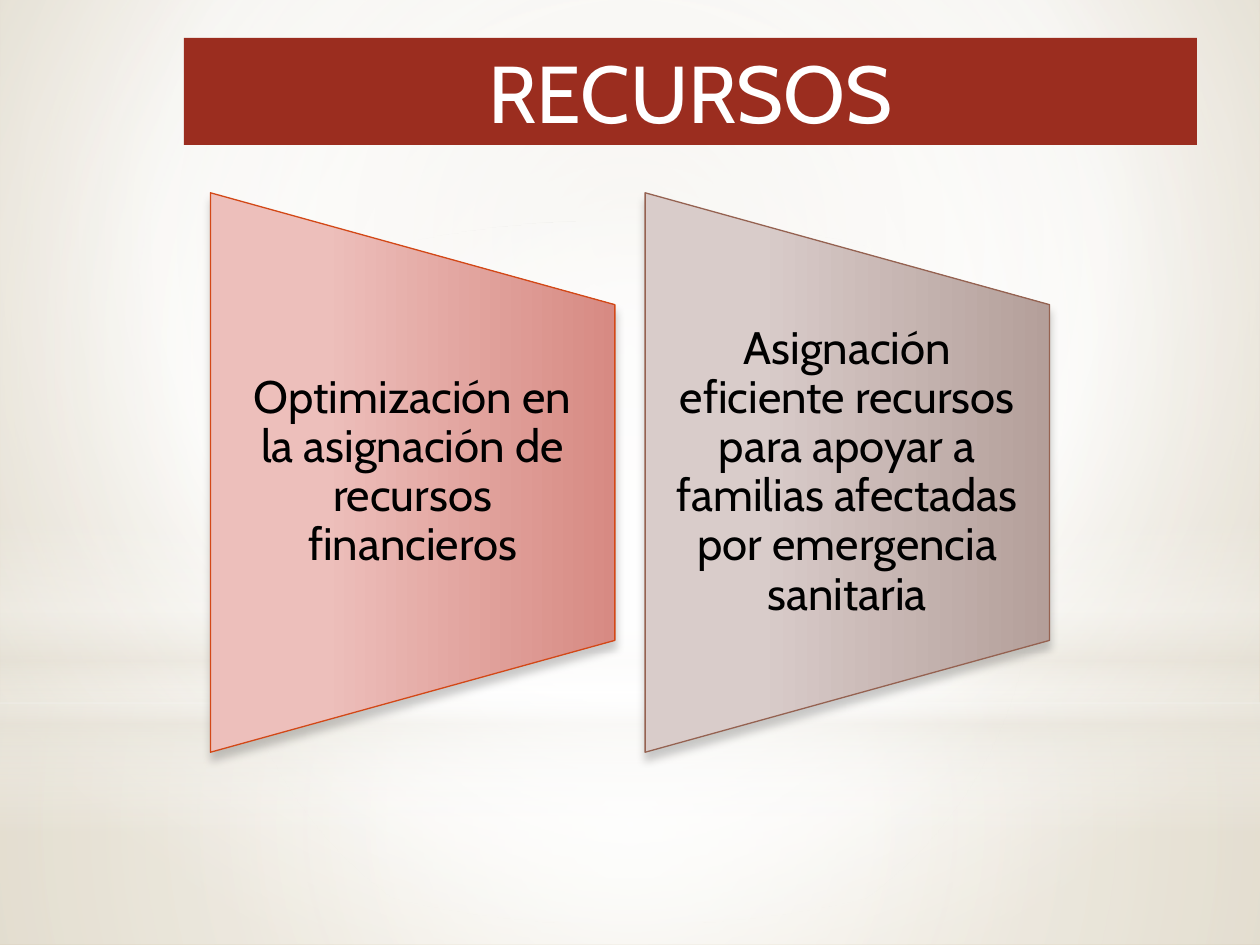
from typing import NamedTuple

from lxml.etree import SubElement as Sub
from pptx import Presentation
from pptx.dml.color import RGBColor
from pptx.enum.shapes import MSO_SHAPE as Kind
from pptx.enum.text import MSO_ANCHOR as Anchor, PP_ALIGN as Align
from pptx.oxml import parse_xml
from pptx.oxml.ns import nsdecls, qn
from pptx.util import Inches, Pt

COLS, ROWS = 100, 75
CELL = Inches(0.1)
FONT = "Cabin"
MID = (50, 50, 50, 50)


class Box(NamedTuple):
    """A place on the grid, in columns and rows."""
    col: float
    row: float
    wide: float
    high: float

    def emu(self) -> list[int]:
        return [round(n * CELL) for n in self]


class Stop(NamedTuple):
    pos: int
    hue: str
    alpha: int = 100


class Layer(NamedTuple):
    kind: Kind
    box: Box
    stops: list[Stop]
    focus: tuple | None = MID


class Panel(NamedTuple):
    text: str
    light: str
    dark: str
    edge: str


LAYERS = [
    Layer(Kind.RECTANGLE, Box(0, 55.8, COLS, 19.2),
          [Stop(0, "FFFFFF", 91), Stop(37, "FFFFFF", 76), Stop(100, "E9E5DC", 79)]),
    Layer(Kind.RECTANGLE, Box(0, 0, COLS, 55.8),
          [Stop(0, "FFFFFF", 89), Stop(48, "FFFFFF", 62), Stop(100, "E9E5DC", 79)]),
    Layer(Kind.RECTANGLE, Box(0, 41.2, COLS, 25),
          [Stop(0, "FFFFFF", 0), Stop(29, "FFFFFF", 30), Stop(45, "E9E5DC", 40),
           Stop(55, "FFFFFF", 26), Stop(65, "E9E5DC", 60), Stop(100, "FFFFFF", 0)], None),
    Layer(Kind.OVAL, Box(0, 17.5, COLS, 55.8),
          [Stop(0, "FFFFFF"), Stop(56, "FFFFFF", 0)]),
]
BACK = [Stop(0, "E3DDCF"), Stop(60, "FFFFFF"), Stop(100, "CDBF9F")]
PANELS = [
    Panel("Optimización en la asignación de recursos financieros",
          "EDBFBB", "D78A83", "D34817"),
    Panel("Asignación eficiente recursos para apoyar a familias afectadas "
          "por emergencia sanitaria", "D9CCCA", "B49F9A", "956251"),
]
FIRST = Box(16.7, 15.3, 32.1, 44.4)
PITCH = 34.5


def color(code: str) -> RGBColor:
    return RGBColor.from_string(code)


def blend(fill, parent, stops: list[Stop], focus: tuple | None = None) -> None:
    """Fill with a gradient: round about the focus, or downwards without one."""
    fill.solid()
    old = parent.find(qn("a:solidFill"))
    grad = parse_xml(f'<a:gradFill {nsdecls("a")} rotWithShape="1"/>')
    chain = Sub(grad, qn("a:gsLst"))
    for stop in stops:
        mark = Sub(chain, qn("a:gs"), pos=str(stop.pos * 1000))
        hue = Sub(mark, qn("a:srgbClr"), val=stop.hue)
        if stop.alpha < 100:
            Sub(hue, qn("a:alpha"), val=str(stop.alpha * 1000))
    if focus:
        ring = Sub(grad, qn("a:path"), {"path": "circle"})
        sides = {side: str(n * 1000) for side, n in zip("ltrb", focus)}
        Sub(ring, qn("a:fillToRect"), sides)
    else:
        Sub(grad, qn("a:lin"), ang="5400000", scaled="0")
    parent.replace(old, grad)


def shade(shape) -> None:
    """Drop a soft shadow straight down."""
    effects = shape._element.spPr.find(qn("a:effectLst"))
    drop = Sub(effects, qn("a:outerShdw"), blurRad=str(Pt(5)), dist=str(Pt(4)),
               dir="5400000", rotWithShape="0")
    hue = Sub(drop, qn("a:srgbClr"), val="000000")
    Sub(hue, qn("a:alpha"), val="20000")


def add(slide, kind: Kind, box: Box):
    shape = slide.shapes.add_shape(kind, *box.emu())
    shape.shadow.inherit = False
    shape.line.fill.background()
    return shape


def write(shape, text: str, size: int, hue: str, space: float = 1) -> None:
    frame = shape.text_frame
    frame.text = text
    frame.word_wrap = True
    frame.vertical_anchor = Anchor.MIDDLE
    para = frame.paragraphs[0]
    para.alignment = Align.CENTER
    para.line_spacing = space
    font = para.runs[0].font
    font.name, font.size = FONT, Pt(size)
    font.color.rgb = color(hue)


def draw_layer(slide, layer: Layer) -> None:
    shape = add(slide, layer.kind, layer.box)
    blend(shape.fill, shape._element.spPr, layer.stops, layer.focus)


def draw_title(slide) -> None:
    bar = add(slide, Kind.RECTANGLE, Box(14.6, 3, 80.4, 8.5))
    bar.fill.solid()
    bar.fill.fore_color.rgb = color("9B2D1F")
    write(bar, "RECURSOS", 46, "FFFFFF")


def draw_panel(slide, panel: Panel, box: Box) -> None:
    """Draw a trapezoid turned on its side, with upright text over it."""
    turn = (box.wide - box.high) / 2
    shape = add(slide, Kind.FLOWCHART_MANUAL_OPERATION,
                Box(box.col + turn, box.row - turn, box.high, box.wide))
    shape.rotation = 270
    blend(shape.fill, shape._element.spPr,
          [Stop(28, panel.light), Stop(100, panel.dark)])
    shape.line.color.rgb = color(panel.edge)
    shape.line.width = Pt(0.75)
    shade(shape)

    inner = Box(box.col, box.row + box.high / 5, box.wide, box.high * 3 / 5)
    label = slide.shapes.add_textbox(*inner.emu())
    frame = label.text_frame
    frame.margin_left = frame.margin_right = Inches(0.18)
    frame.margin_top = frame.margin_bottom = 0
    write(label, panel.text, 26, "000000", 0.9)


def main() -> None:
    deck = Presentation()
    deck.slide_width, deck.slide_height = COLS * CELL, ROWS * CELL
    slide = deck.slides.add_slide(deck.slide_layouts[6])
    fill = slide.background.fill
    fill.solid()
    blend(fill, slide.element.find(".//" + qn("p:bgPr")), BACK, (20, 10, 20, 60))
    for layer in LAYERS:
        draw_layer(slide, layer)
    draw_title(slide)
    for i, panel in enumerate(PANELS):
        draw_panel(slide, panel, FIRST._replace(col=FIRST.col + i * PITCH))
    deck.save("out.pptx")


if __name__ == "__main__":
    main()
